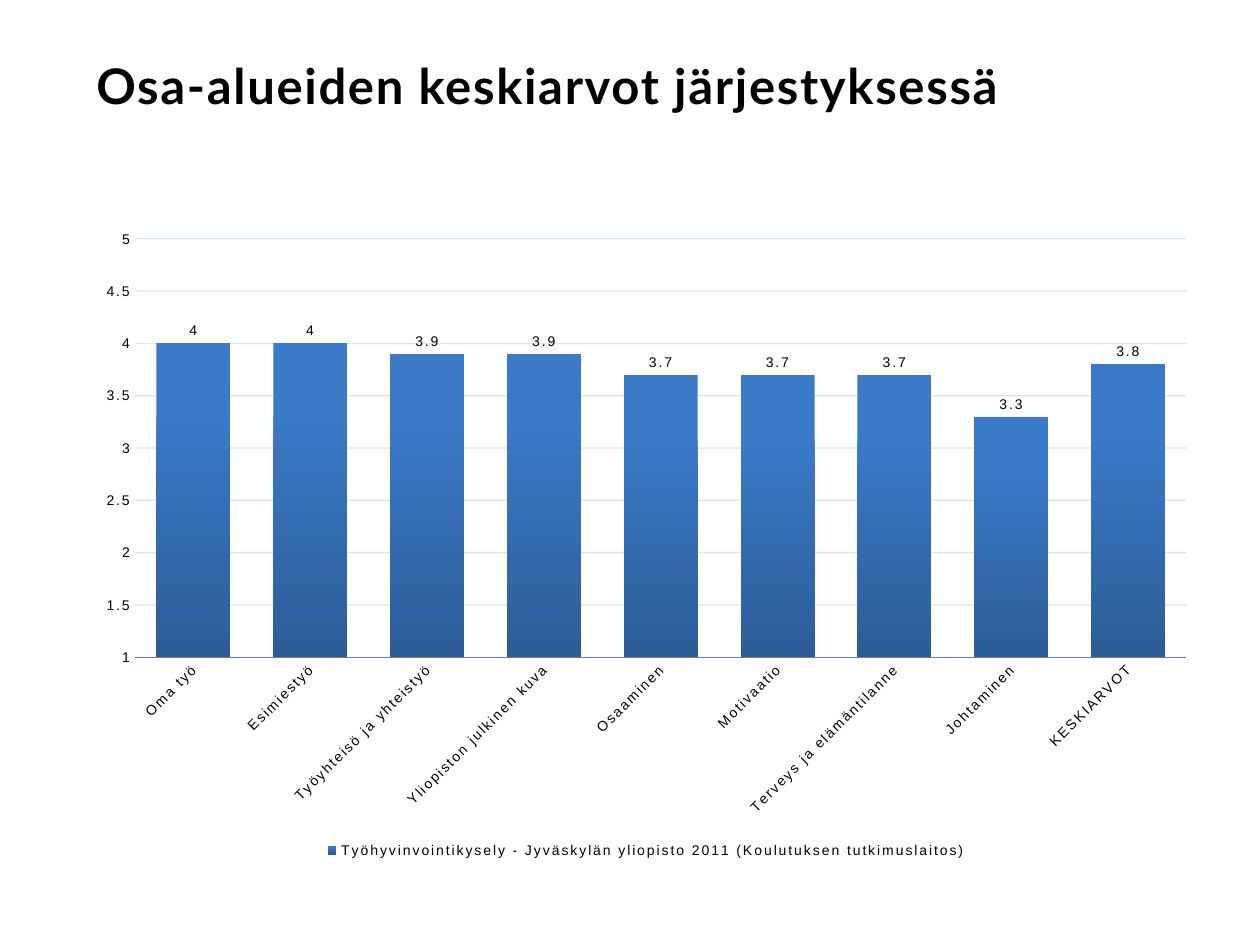
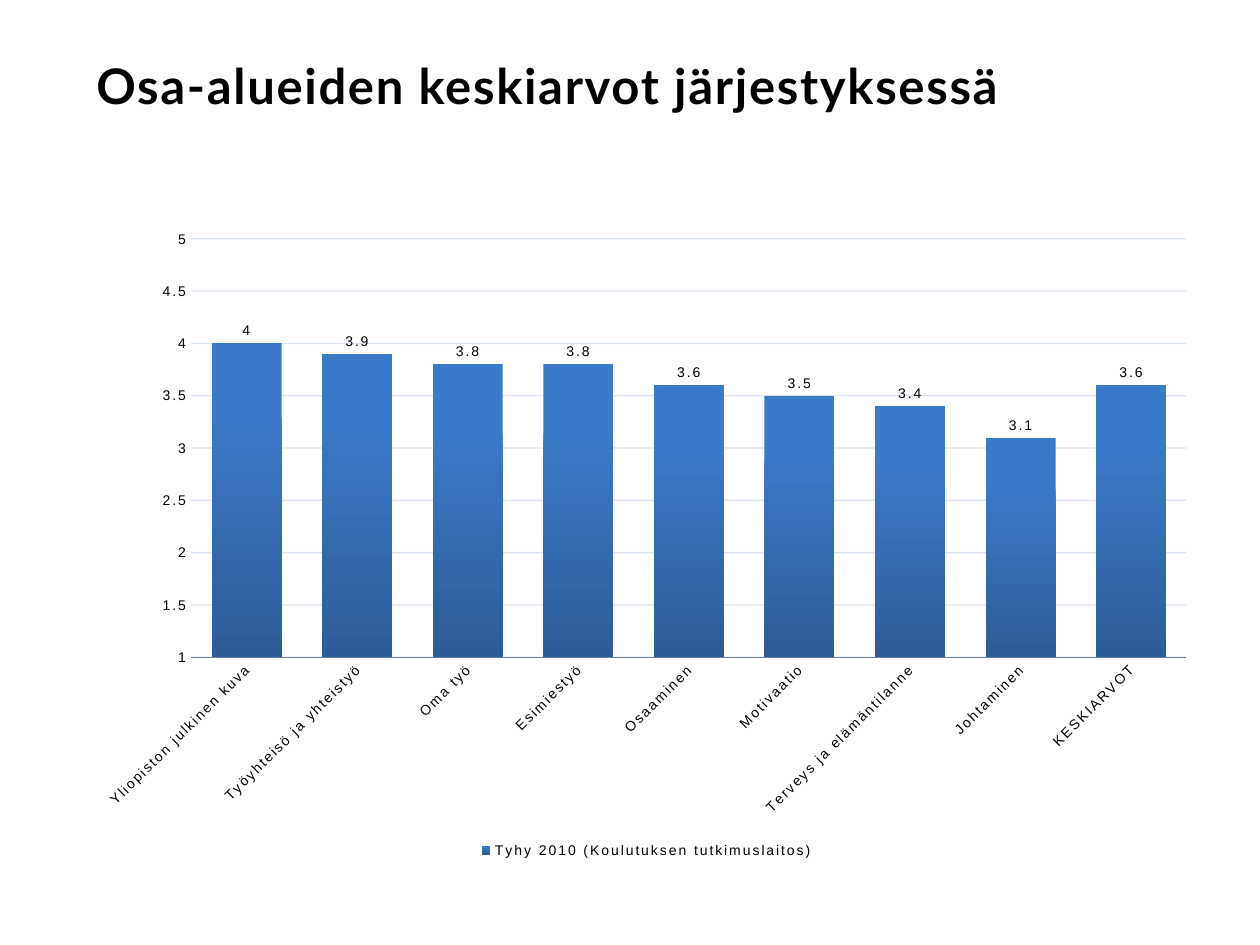
from pptx import Presentation
from pptx.chart.data import CategoryChartData
from pptx.dml.color import RGBColor
from pptx.enum.chart import XL_CHART_TYPE, XL_LABEL_POSITION, XL_LEGEND_POSITION, XL_TICK_MARK
from pptx.enum.text import MSO_ANCHOR
from pptx.oxml.ns import qn
from pptx.oxml.xmlchemy import OxmlElement
from pptx.util import Emu, Pt

COLUMNS = XL_CHART_TYPE.COLUMN_CLUSTERED
OUTSIDE = XL_LABEL_POSITION.OUTSIDE_END
BOTTOM = XL_LEGEND_POSITION.BOTTOM
NO_TICK = XL_TICK_MARK.NONE
TOP = MSO_ANCHOR.TOP

BLACK = RGBColor(0x00, 0x00, 0x00)
WHITE = RGBColor(0xFF, 0xFF, 0xFF)
GRID_BLUE = RGBColor(0x4F, 0x81, 0xBD)
BAR_LIGHT = RGBColor(0x3B, 0x7A, 0xC9)
BAR_DARK = RGBColor(0x2C, 0x5D, 0x98)
AXIS_GREY = RGBColor(0x70, 0x80, 0x98)

PX_PER_INCH = 126
PAGE_SIZE = (1260, 945)
TITLE_BOX = (84, 49, 1125, 159)
CHART_BOX = (84, 218, 1125, 645)
LETTER_SPACING = "100"
LABEL_TILT = "-2700000"

TITLE = "Osa-alueiden keskiarvot järjestyksessä"
SURVEYS = [
    ("Työhyvinvointikysely - Jyväskylän yliopisto 2011 (Koulutuksen tutkimuslaitos)", {
        "Oma työ": 4, "Esimiestyö": 4, "Työyhteisö ja yhteistyö": 3.9,
        "Yliopiston julkinen kuva": 3.9, "Osaaminen": 3.7, "Motivaatio": 3.7,
        "Terveys ja elämäntilanne": 3.7, "Johtaminen": 3.3, "KESKIARVOT": 3.8}),
    ("Tyhy 2010 (Koulutuksen tutkimuslaitos)", {
        "Yliopiston julkinen kuva": 4, "Työyhteisö ja yhteistyö": 3.9, "Oma työ": 3.8,
        "Esimiestyö": 3.8, "Osaaminen": 3.6, "Motivaatio": 3.5,
        "Terveys ja elämäntilanne": 3.4, "Johtaminen": 3.1, "KESKIARVOT": 3.6}),
]


def emu(lengths):
    return [Emu(round(length * 914400 / PX_PER_INCH)) for length in lengths]


def set_font(font, name, size, bold=False):
    font.name = name
    font.size = Pt(size)
    font.bold = bold
    font.color.rgb = BLACK


def add_title(page, box):
    frame = page.shapes.add_textbox(*emu(box)).text_frame
    frame.word_wrap = True
    frame.vertical_anchor = TOP
    para = frame.paragraphs[0]
    span = para.add_run()
    span.text = TITLE
    set_font(para.font, "Lato", 28, bold=True)
    span._r.get_or_add_rPr().set("spc", LETTER_SPACING)


def style_axes(chart):
    categories, values = chart.category_axis, chart.value_axis
    for axis in (categories, values):
        axis.major_tick_mark = axis.minor_tick_mark = NO_TICK
        set_font(axis.tick_labels.font, "Arial", 8)
    categories.format.line.color.rgb = AXIS_GREY
    categories.format.line.width = Pt(0.75)
    categories._element.find(qn("c:txPr")).find(qn("a:bodyPr")).set("rot", LABEL_TILT)

    values.minimum_scale, values.maximum_scale, values.major_unit = 1, 5, 0.5
    values.format.line.fill.background()
    grid_line = values.major_gridlines.format.line
    grid_line.color.rgb = GRID_BLUE
    grid_line.width = Pt(0.75)
    alpha = OxmlElement("a:alpha")
    alpha.set("val", "20000")
    grid = values._element.find(qn("c:majorGridlines"))
    next(grid.iter(qn("a:srgbClr"))).append(alpha)


def style_bars(plot):
    plot.gap_width = 58
    plot.vary_by_categories = False
    fill = plot.series[0].format.fill
    fill.gradient()
    fill.gradient_angle = 270
    for stop, color, position in zip(fill.gradient_stops, (BAR_LIGHT, BAR_DARK), (0.2, 1)):
        stop.color.rgb = color
        stop.position = position
    plot.has_data_labels = True
    labels = plot.data_labels
    labels.show_value = True
    labels.position = OUTSIDE
    set_font(labels.font, "Arial", 8)


def add_survey_chart(page, box, survey, averages):
    data = CategoryChartData()
    data.categories = list(averages)
    data.add_series(survey, list(averages.values()))
    chart = page.shapes.add_chart(COLUMNS, *emu(box), data).chart
    chart.has_title = False
    set_font(chart.font, "Calibri", 10)
    chart.has_legend = True
    chart.legend.position = BOTTOM
    chart.legend.include_in_layout = False
    set_font(chart.legend.font, "Arial", 8)
    style_axes(chart)
    style_bars(chart.plots[0])
    for properties in chart.element.iter(qn("a:defRPr")):
        properties.set("spc", LETTER_SPACING)


def add_survey_page(deck, survey, averages):
    page = deck.slides.add_slide(deck.slide_layouts[6])
    page.background.fill.solid()
    page.background.fill.fore_color.rgb = WHITE
    add_title(page, TITLE_BOX)
    add_survey_chart(page, CHART_BOX, survey, averages)


def main():
    deck = Presentation()
    deck.slide_width, deck.slide_height = emu(PAGE_SIZE)
    for survey, averages in SURVEYS:
        add_survey_page(deck, survey, averages)
    deck.save("out.pptx")


if __name__ == "__main__":
    main()
